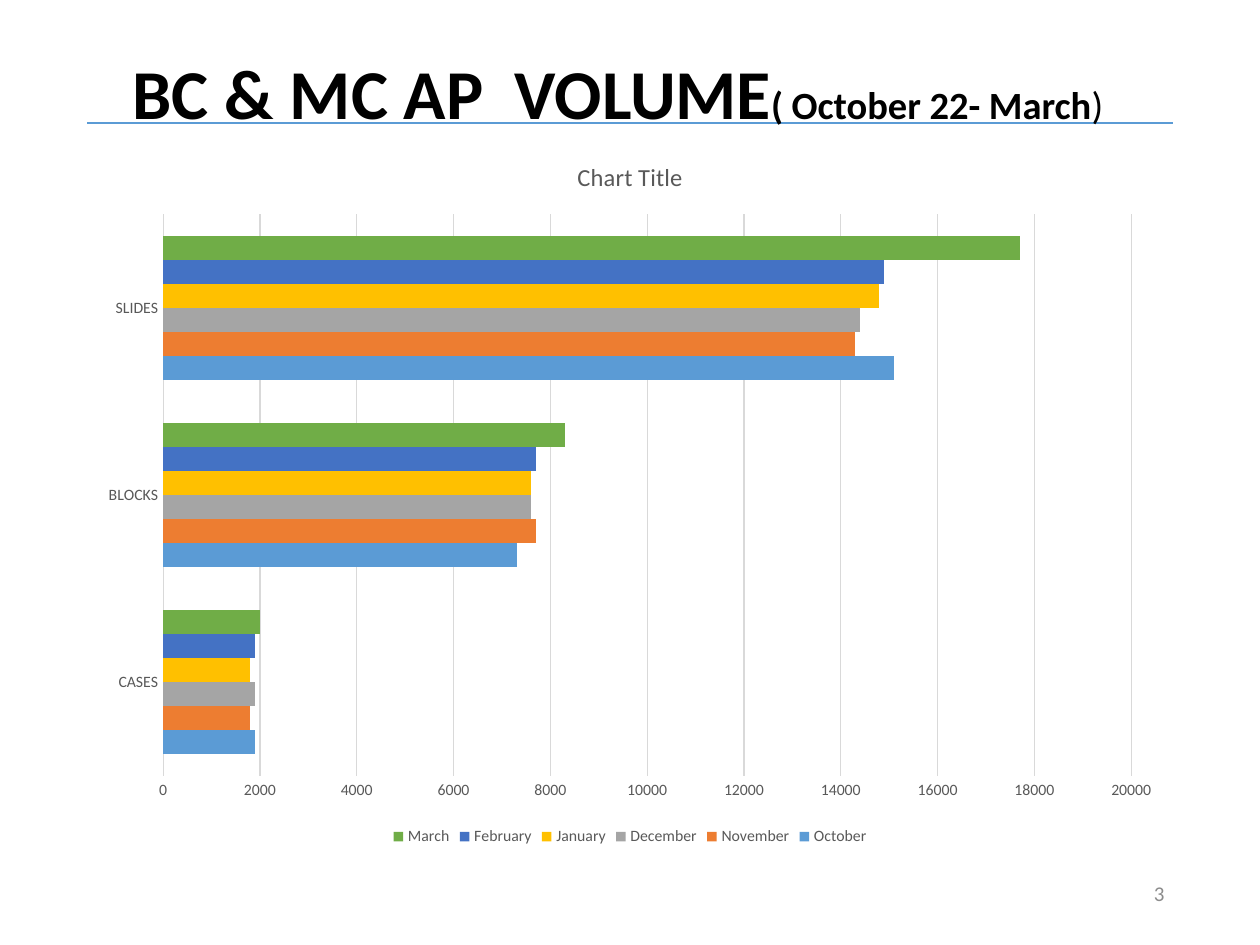
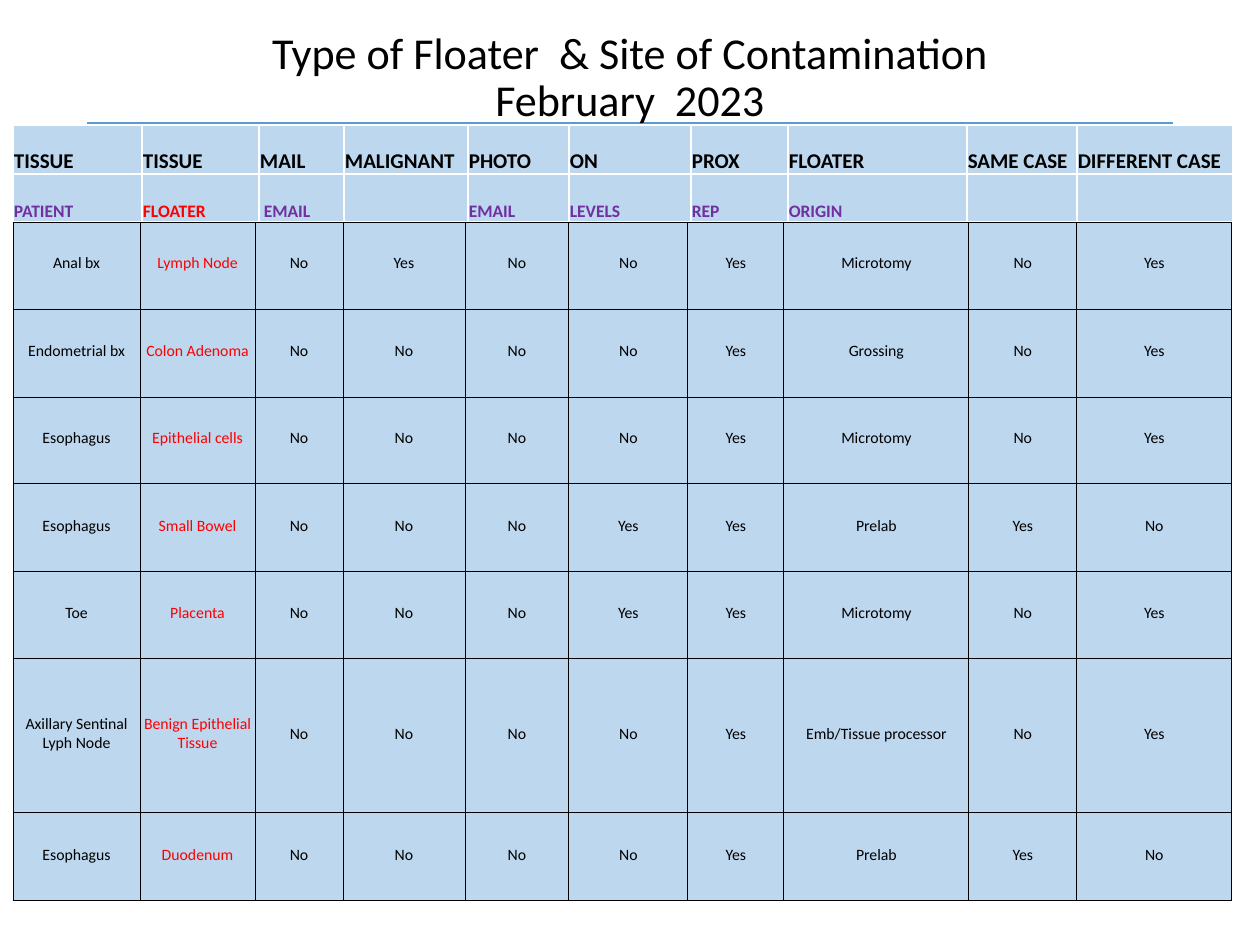
import pptx
import pptx.chart.data
import pptx.dml.color
import pptx.enum.chart
import pptx.enum.shapes
import pptx.enum.text
import pptx.oxml
import pptx.oxml.ns
import pptx.util
import lxml.etree

PX = 914400 / 126
FONT = "Calibri"
COLOURS = {
    "black": "000000", "white": "FFFFFF", "rule": "5B9BD5", "number": "8C8C8C",
    "chart_text": "595959", "grid": "D9D9D9", "cell": "BDD7EE",
    "red": "FF0000", "purple": "7030A0",
    "October": "5B9BD5", "November": "ED7D31", "December": "A5A5A5",
    "January": "FFC000", "February": "4472C4", "March": "70AD47",
}
ALIGN = pptx.enum.text.PP_ALIGN
ANCHOR = pptx.enum.text.MSO_ANCHOR

VOLUMES = {
    "October": (1900, 7300, 15100),
    "November": (1800, 7700, 14300),
    "December": (1900, 7600, 14400),
    "January": (1800, 7600, 14800),
    "February": (1900, 7700, 14900),
    "March": (2000, 8300, 17700),
}
HEADINGS = [
    ["TISSUE", "TISSUE", "MAIL", "MALIGNANT", "PHOTO", "ON", "PROX", "FLOATER",
     "SAME CASE", "DIFFERENT CASE"],
    ["PATIENT", "FLOATER", " EMAIL", "", "EMAIL", "LEVELS", "REP", "ORIGIN", "", ""],
]
FLOATERS = [
    ["Anal bx", "Lymph Node", "No", "Yes", "No", "No", "Yes", "Microtomy", "No", "Yes"],
    ["Endometrial bx", "Colon Adenoma", "No", "No", "No", "No", "Yes", "Grossing", "No", "Yes"],
    ["Esophagus", "Epithelial cells", "No", "No", "No", "No", "Yes", "Microtomy", "No", "Yes"],
    ["Esophagus", "Small Bowel", "No", "No", "No", "Yes", "Yes", "Prelab", "Yes", "No"],
    ["Toe", "Placenta", "No", "No", "No", "Yes", "Yes", "Microtomy", "No", "Yes"],
    ["Axillary Sentinal Lyph Node", "Benign Epithelial Tissue", "No", "No", "No", "No", "Yes",
     "Emb/Tissue processor", "No", "Yes"],
    ["Esophagus", "Duodenum", "No", "No", "No", "No", "Yes", "Prelab", "Yes", "No"],
]


def px(*lengths):
    return [pptx.util.Emu(round(length * PX)) for length in lengths]


def colour(name):
    return pptx.dml.color.RGBColor.from_string(COLOURS[name])


def format_font(font, size, tint="black", bold=False):
    font.name = FONT
    font.size = pptx.util.Pt(size)
    font.bold = bold
    font.color.rgb = colour(tint)


def add_text(para, text, **style):
    for index, line in enumerate(text.split("\n")):
        if index:
            para.add_line_break()
        span = para.add_run()
        span.text = line
        format_font(span.font, **style)


def add_box(page, place, align):
    box = page.shapes.add_textbox(*px(*place))
    box.text_frame.word_wrap = True
    box.text_frame.vertical_anchor = ANCHOR.MIDDLE
    para = box.text_frame.paragraphs[0]
    para.alignment = align
    return para


def add_title(page, place, spans):
    para = add_box(page, place, ALIGN.CENTER)
    para.line_spacing = 0.9
    for text, style in spans:
        add_text(para, text, **style)


def add_rule(page):
    rule = page.shapes.add_connector(
        pptx.enum.shapes.MSO_CONNECTOR.STRAIGHT, *px(1173, 123, 87, 123))
    rule.line.color.rgb = colour("rule")
    rule.line.width = pptx.util.Pt(1)
    lxml.etree.SubElement(rule._element.spPr, pptx.oxml.ns.qn("a:effectLst"))


def format_axis(axis):
    axis.major_tick_mark = pptx.enum.chart.XL_TICK_MARK.NONE
    axis.minor_tick_mark = pptx.enum.chart.XL_TICK_MARK.NONE
    format_font(axis.tick_labels.font, 9, "chart_text")


def format_grid_line(line):
    line.color.rgb = colour("grid")
    line.width = pptx.util.Pt(0.75)


def add_volume_chart(page, place):
    data = pptx.chart.data.CategoryChartData()
    data.categories = ["CASES", "BLOCKS", "SLIDES"]
    for month, counts in VOLUMES.items():
        data.add_series(month, counts)
    chart = page.shapes.add_chart(
        pptx.enum.chart.XL_CHART_TYPE.BAR_CLUSTERED, *px(*place), data).chart
    format_font(chart.font, 10)

    chart.has_title = True
    add_text(chart.chart_title.text_frame.paragraphs[0], "Chart Title",
             size=14, tint="chart_text")
    chart.has_legend = True
    chart.legend.position = pptx.enum.chart.XL_LEGEND_POSITION.BOTTOM
    chart.legend.include_in_layout = False
    format_font(chart.legend.font, 9, "chart_text")

    format_axis(chart.category_axis)
    format_grid_line(chart.category_axis.format.line)
    values = chart.value_axis
    format_axis(values)
    values.minimum_scale, values.maximum_scale, values.major_unit = 0, 20000, 2000
    values.format.line.fill.background()
    format_grid_line(values.major_gridlines.format.line)

    plot = chart.plots[0]
    plot.gap_width = 182
    plot.vary_by_categories = False
    for series in plot.series:
        series.format.fill.solid()
        series.format.fill.fore_color.rgb = colour(series.name)


def add_borders(cell, tint, width):
    properties = cell._tc.get_or_add_tcPr()
    for side in ("lnL", "lnR", "lnT", "lnB"):
        properties.append(pptx.oxml.parse_xml(
            f'<a:{side} {pptx.oxml.ns.nsdecls("a")} w="{pptx.util.Pt(width)}">'
            f'<a:solidFill><a:srgbClr val="{COLOURS[tint]}"/></a:solidFill></a:{side}>'))


def add_table(page, left, top, widths, heights, rows, style_of, border,
              align, anchor, bottom):
    frame = page.shapes.add_table(
        len(rows), len(widths), *px(left, top, sum(widths), sum(heights)))
    table = frame.table
    table.first_row = table.horz_banding = False
    for column, width in zip(table.columns, px(*widths)):
        column.width = width
    for row, height in zip(table.rows, px(*heights)):
        row.height = height
    for row_index, texts in enumerate(rows):
        for column_index, text in enumerate(texts):
            cell = table.cell(row_index, column_index)
            add_borders(cell, *border)
            cell.fill.solid()
            cell.fill.fore_color.rgb = colour("cell")
            cell.margin_left, cell.margin_right, cell.margin_top, cell.margin_bottom = px(
                1, 1, 1, bottom)
            cell.vertical_anchor = anchor
            para = cell.text_frame.paragraphs[0]
            para.alignment = align
            if text:
                add_text(para, text, **style_of(row_index, column_index))


def heading_style(row, column):
    if row == 0:
        return {"size": 12, "bold": True}
    return {"size": 10, "bold": True, "tint": "red" if column == 1 else "purple"}


def floater_style(row, column):
    return {"size": 9, "tint": "red" if column == 1 else "black"}


def add_volume_page(page):
    add_rule(page)
    add_title(page, (59, 49, 1118, 96), [
        ("BC & MC AP  VOLUME", {"size": 40, "bold": True}),
        ("( October 22- March", {"size": 22, "bold": True}),
        (")", {"size": 22}),
    ])
    add_volume_chart(page, (87, 134, 1086, 717))
    add_text(add_box(page, (893, 868, 284, 50), ALIGN.RIGHT), "3", size=12, tint="number")


def add_floater_page(page):
    add_rule(page)
    add_title(page, (87, 31, 1086, 95), [
        ("Type of Floater  & Site of Contamination\nFebruary  2023", {"size": 25.2}),
    ])
    add_table(page, 13, 125, [129, 117, 85, 124, 101, 122, 97, 179, 110, 156], [49, 48],
              HEADINGS, heading_style, ("white", 1), ALIGN.LEFT, ANCHOR.BOTTOM, 0)
    add_table(page, 13, 222, [127, 115, 88, 122, 104, 119, 96, 185, 108, 155],
              [87, 88, 87, 88, 87, 154, 88],
              FLOATERS, floater_style, ("black", 0.5), ALIGN.CENTER, ANCHOR.MIDDLE, 5)


def main():
    deck = pptx.Presentation()
    deck.slide_width, deck.slide_height = px(1260, 945)
    for fill_page in (add_volume_page, add_floater_page):
        fill_page(deck.slides.add_slide(deck.slide_layouts[6]))
    deck.save("out.pptx")


if __name__ == "__main__":
    main()
